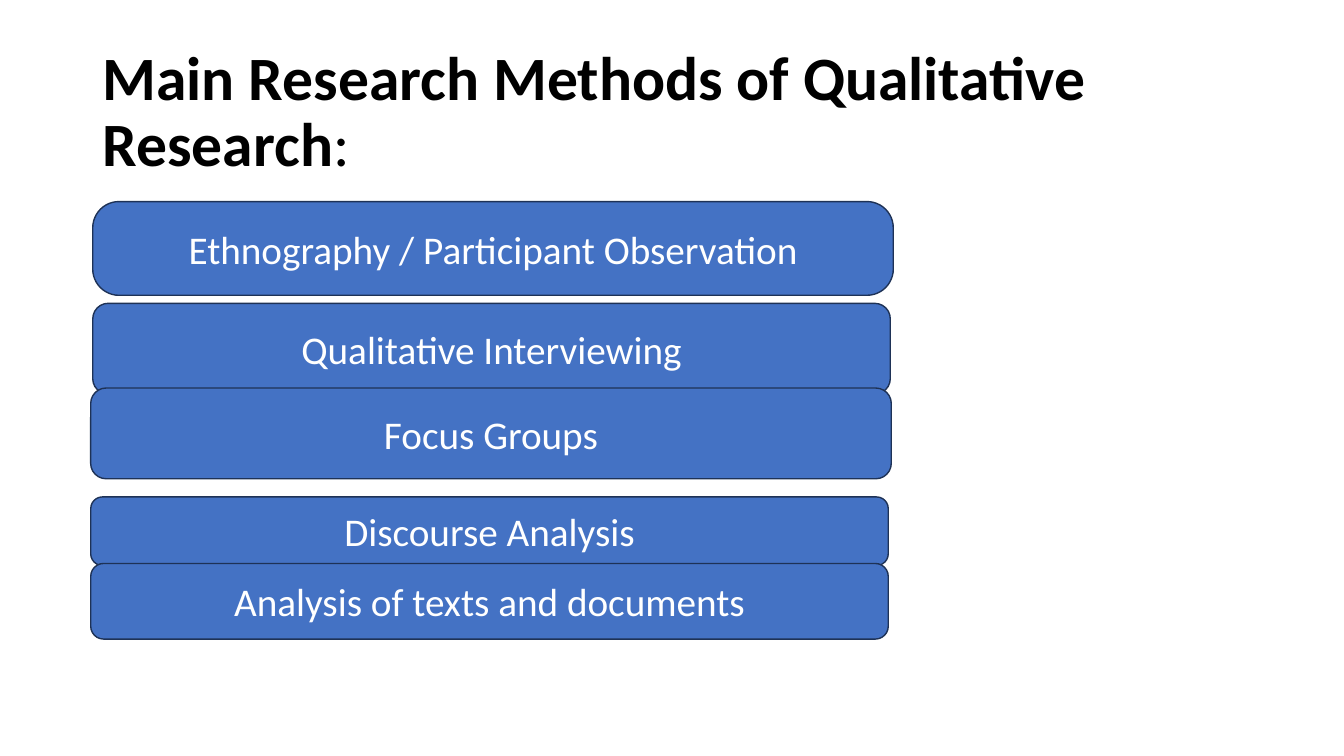
"""Build a slide that lists the main methods of qualitative research."""
from pptx import Presentation
from pptx.dml.color import RGBColor
from pptx.enum import shapes, text
from pptx.util import Inches, Pt

BLACK = RGBColor(0x00, 0x00, 0x00)
WHITE = RGBColor(0xFF, 0xFF, 0xFF)
BLUE = RGBColor(0x44, 0x72, 0xC4)
NAVY = RGBColor(0x1E, 0x32, 0x56)
FONT = "Calibri"

METHODS = [
    ("Ethnography / Participant Observation", (0.92, 2, 7.94, 0.93), 0.28),
    ("Qualitative Interviewing", (0.92, 3.01, 7.91, 0.9), 0.17),
    ("Focus Groups", (0.9, 3.85, 7.94, 0.9), 0.17),
    ("Discourse Analysis", (0.9, 4.93, 7.91, 0.68), 0.17),
    ("Analysis of texts and documents", (0.9, 5.59, 7.91, 0.75), 0.17),
]


def add_run(paragraph, words, size=28, color=WHITE, bold=False):
    """Append formatted words to a paragraph."""
    run = paragraph.add_run()
    run.text = words
    run.font.name = FONT
    run.font.size = Pt(size)
    run.font.bold = bold
    run.font.color.rgb = color


def open_paragraph(holder, align, line_spacing=1.0):
    """Prepare a wrapped, vertically centred frame and return its paragraph."""
    frame = holder.text_frame
    frame.word_wrap = True
    frame.vertical_anchor = text.MSO_ANCHOR.MIDDLE
    paragraph = frame.paragraphs[0]
    paragraph.alignment = align
    paragraph.line_spacing = line_spacing
    return paragraph


def add_title(slide, heading, ending):
    """Add the bold heading with its regular-weight ending."""
    title = slide.shapes.add_textbox(*map(Inches, (0.92, 0.4, 11.5, 1.45)))
    paragraph = open_paragraph(title, text.PP_ALIGN.LEFT, 0.9)
    add_run(paragraph, heading, size=44, color=BLACK, bold=True)
    add_run(paragraph, ending, size=44, color=BLACK)


def add_method(slide, name, box, rounding):
    """Add one rounded bar that names a research method."""
    bar = slide.shapes.add_shape(
        shapes.MSO_SHAPE.ROUNDED_RECTANGLE, *map(Inches, box))
    bar.adjustments[0] = rounding
    bar.shadow.inherit = False
    bar.fill.solid()
    bar.fill.fore_color.rgb = BLUE
    bar.line.color.rgb = NAVY
    bar.line.width = Pt(1)
    add_run(open_paragraph(bar, text.PP_ALIGN.CENTER), name)


def main():
    """Create and save the presentation."""
    deck = Presentation()
    deck.slide_width = Inches(13.33)
    deck.slide_height = Inches(7.5)
    slide = deck.slides.add_slide(deck.slide_layouts[6])
    add_title(slide, "Main Research Methods of Qualitative Research", ":")
    for name, box, rounding in METHODS:
        add_method(slide, name, box, rounding)
    deck.save("out.pptx")


if __name__ == "__main__":
    main()
